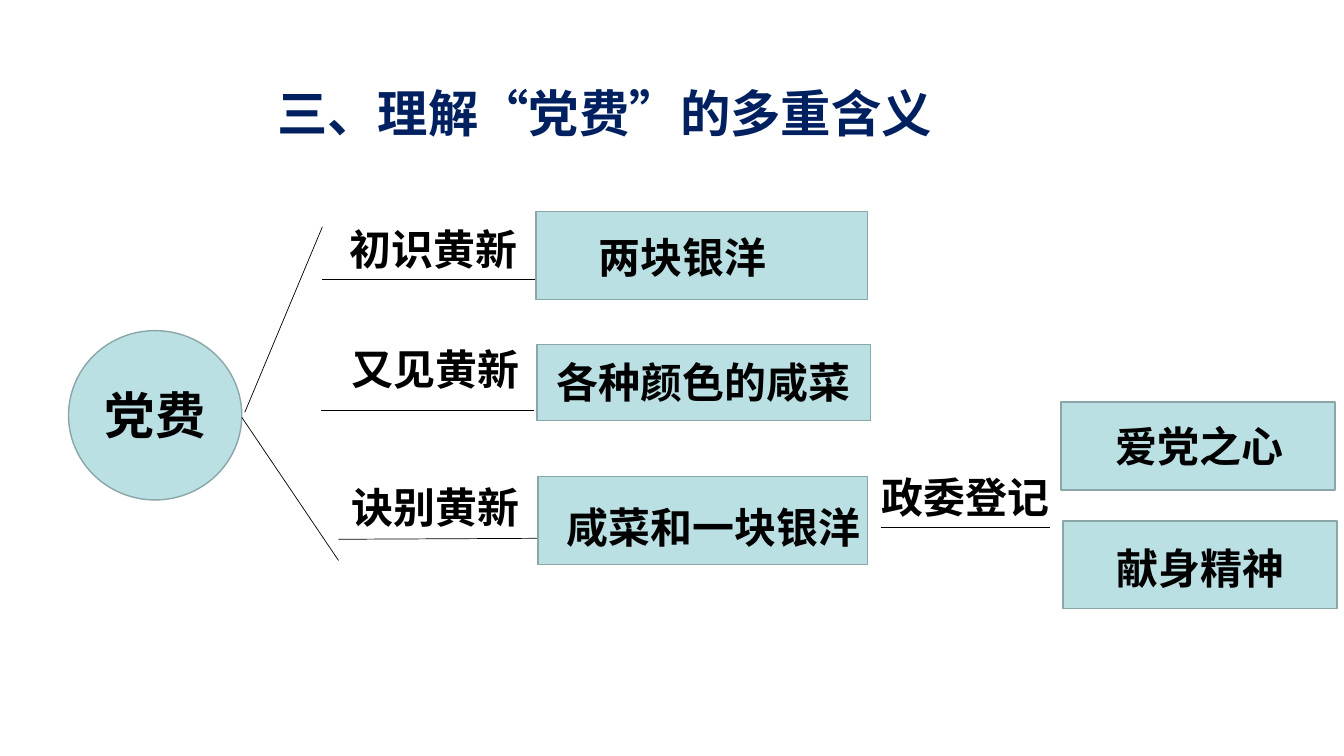
import dataclasses
import typing

import lxml.etree
import pptx
import pptx.dml.color
import pptx.enum.shapes
import pptx.enum.text
import pptx.oxml.ns
import pptx.util

Inches = pptx.util.Inches
Shapes = pptx.enum.shapes.MSO_SHAPE
Align = pptx.enum.text.PP_ALIGN
qn = pptx.oxml.ns.qn


@dataclasses.dataclass(frozen=True)
class Theme:
    font: str = "Noto Sans CJK SC"
    navy: str = "002060"
    black: str = "000000"
    fill: str = "BBE0E3"
    edge: str = "8AA6A8"
    large: int = 36
    small: int = 30
    thin: float = 0.5
    thick: float = 1


class Frame(typing.NamedTuple):
    left: float
    top: float
    width: float
    height: float


class Label(typing.NamedTuple):
    text: str
    left: float
    top: float
    width: float


class Line(typing.NamedTuple):
    x1: float
    y1: float
    x2: float
    y2: float


THEME = Theme()
ROW = 0.6

PANELS = [
    Frame(5.32, 2.1, 3.29, 0.87),
    Frame(5.33, 3.42, 3.31, 0.75),
    Frame(5.34, 4.73, 3.27, 0.87),
    Frame(10.53, 3.99, 2.72, 0.87),
    Frame(10.55, 5.17, 2.72, 0.87),
]
LABELS = [
    Label("初识黄新", 3.26, 2.17, 2.08),
    Label("又见黄新", 3.28, 3.36, 2.08),
    Label("诀别黄新", 3.28, 4.73, 2.08),
    Label("两块银洋", 5.41, 2.25, 2.73),
    Label("各种颜色的咸菜", 5.33, 3.49, 3.31),
    Label("咸菜和一块银洋", 5.43, 4.93, 3.31),
    Label("政委登记", 8.54, 4.63, 2.08),
    Label("爱党之心", 10.54, 4.12, 2.73),
    Label("献身精神", 10.55, 5.33, 2.73),
]
LINES = [
    Line(3.2, 2.25, 2.43, 4.09),
    Line(2.4, 4.14, 3.36, 5.56),
    Line(3.2, 2.77, 5.32, 2.77),
    Line(3.19, 4.07, 5.3, 4.07),
    Line(3.36, 5.35, 5.47, 5.34),
    Line(8.74, 5.23, 10.42, 5.23),
]


def color(code: str) -> pptx.dml.color.RGBColor:
    return pptx.dml.color.RGBColor.from_string(code)


def write(shape, text: str, *, size: int = THEME.small,
          ink: str = THEME.black, align=Align.CENTER) -> None:
    """Put bold text in a shape, with the font set for Latin and Chinese."""
    frame = shape.text_frame
    frame.word_wrap = True
    frame.auto_size = pptx.enum.text.MSO_AUTO_SIZE.NONE
    frame.vertical_anchor = pptx.enum.text.MSO_ANCHOR.MIDDLE
    para = frame.paragraphs[0]
    para.alignment = align
    run = para.add_run()
    run.text = text
    run.font.size = pptx.util.Pt(size)
    run.font.bold = True
    run.font.color.rgb = color(ink)
    run.font.name = THEME.font
    for props in shape.element.iter(qn("a:rPr")):
        lxml.etree.SubElement(props, qn("a:ea"), typeface=THEME.font)


def add_panel(slide, kind, frame: Frame) -> None:
    shape = slide.shapes.add_shape(kind, *map(Inches, frame))
    shape.shadow.inherit = False
    shape.fill.solid()
    shape.fill.fore_color.rgb = color(THEME.fill)
    shape.line.color.rgb = color(THEME.edge)
    shape.line.width = pptx.util.Pt(THEME.thick)


def add_line(slide, line: Line) -> None:
    link = slide.shapes.add_connector(
        pptx.enum.shapes.MSO_CONNECTOR.STRAIGHT, *map(Inches, line))
    link.line.color.rgb = color(THEME.black)
    link.line.width = pptx.util.Pt(THEME.thin)
    props = link.element.find(qn("p:spPr"))
    lxml.etree.SubElement(props, qn("a:effectLst"))


def add_text(slide, frame: Frame, text: str, **style) -> None:
    write(slide.shapes.add_textbox(*map(Inches, frame)), text, **style)


def main() -> None:
    deck = pptx.Presentation()
    deck.slide_width = Inches(13.34)
    deck.slide_height = Inches(7.5)
    slide = deck.slides.add_slide(deck.slide_layouts.get_by_name("Title Only"))

    title = slide.shapes.title
    title.left, title.top = Inches(2.65), Inches(0.76)
    title.width, title.height = Inches(6.8), Inches(0.71)
    write(title, "三、理解“党费”的多重含义", size=THEME.large,
          ink=THEME.navy, align=Align.LEFT)

    add_panel(slide, Shapes.OVAL, Frame(0.68, 3.28, 1.72, 1.68))
    add_text(slide, Frame(0.81, 3.76, 1.46, 0.71), "党费", size=THEME.large)
    for line in LINES:
        add_line(slide, line)
    for panel in PANELS:
        add_panel(slide, Shapes.RECTANGLE, panel)
    for label in LABELS:
        frame = Frame(label.left, label.top, label.width, ROW)
        add_text(slide, frame, label.text)

    deck.save("out.pptx")


if __name__ == "__main__":
    main()
